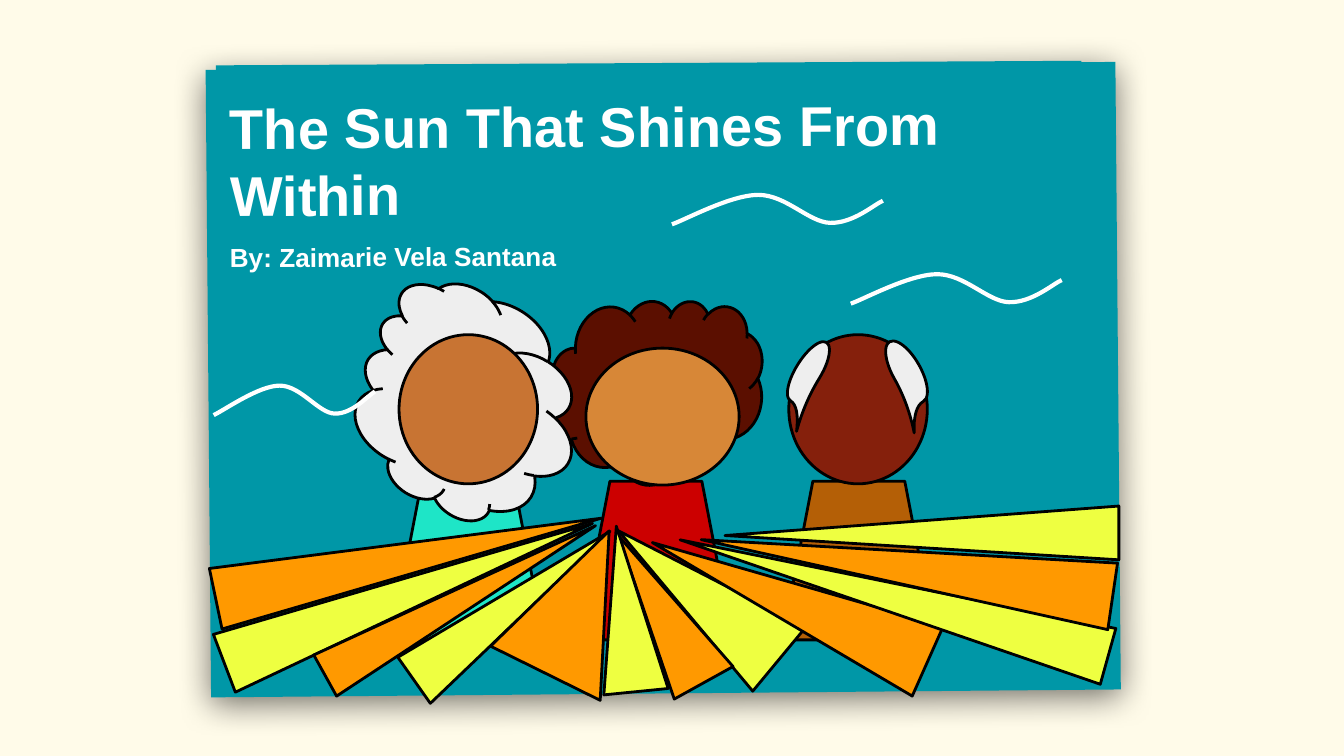
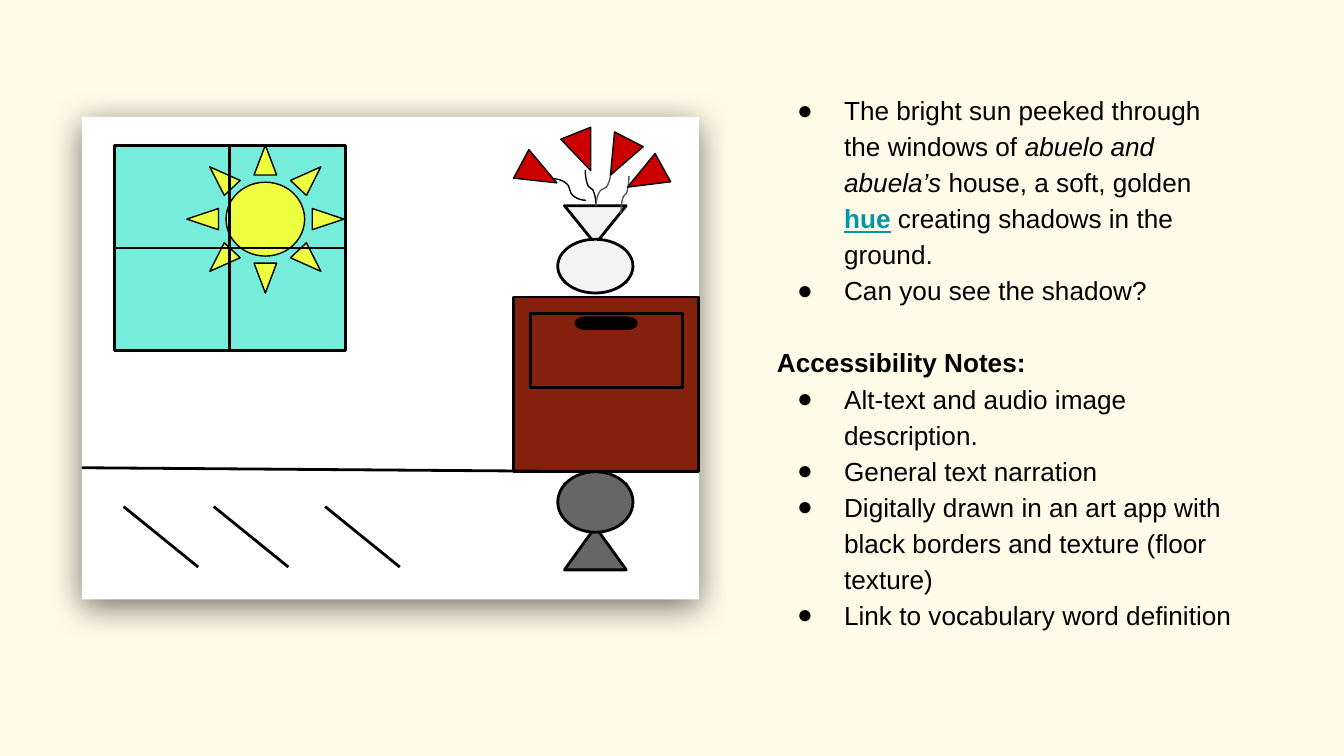
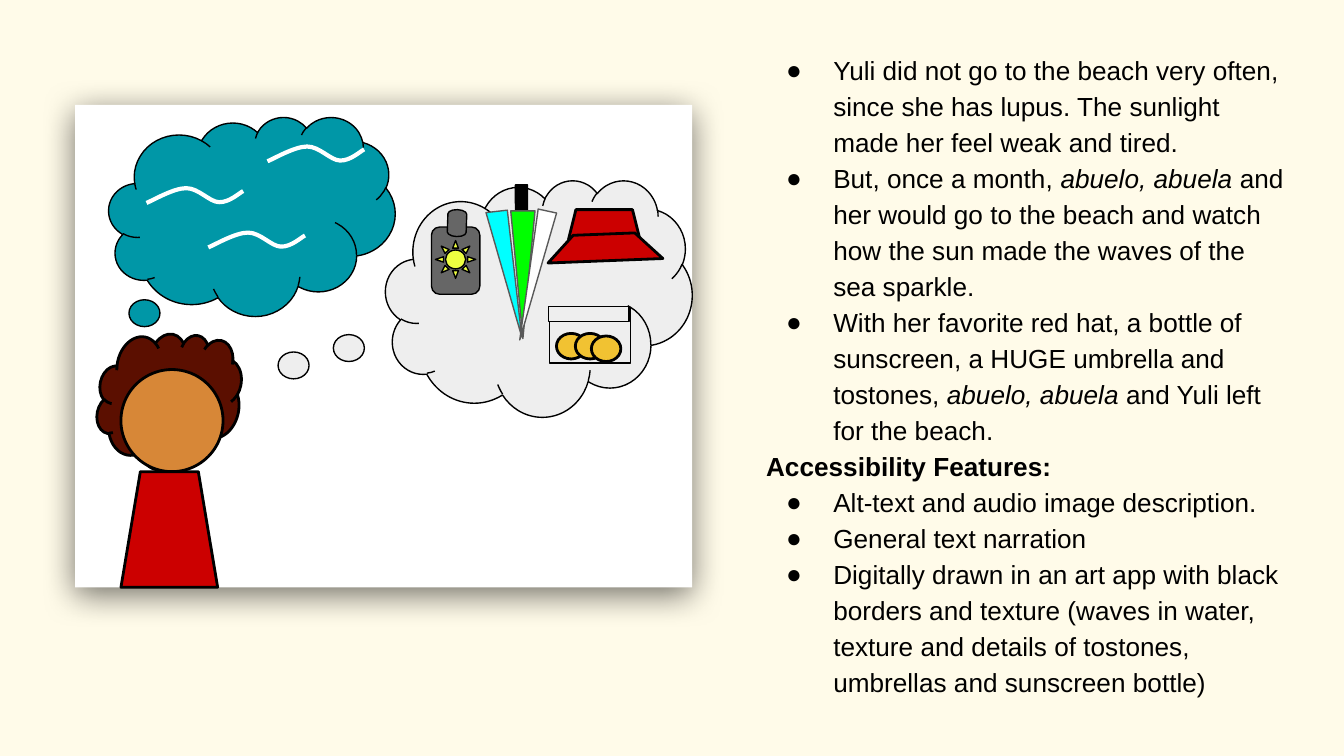
"""Build a three-slide storyboard for an accessible picture book."""
from lxml import etree
from pptx import Presentation
from pptx.dml.color import RGBColor
from pptx.enum import shapes, text
from pptx.oxml.ns import qn
from pptx.util import Pt

S, C = shapes.MSO_SHAPE, shapes.MSO_CONNECTOR
FONT = "Arial"
CREAM = RGBColor(0xFF, 0xFB, 0xE9)
TEAL = RGBColor(0x00, 0x97, 0xA7)
WHITE = RGBColor(0xFF, 0xFF, 0xFF)
BLACK = RGBColor(0x00, 0x00, 0x00)
GRAY = RGBColor(0x59, 0x59, 0x59)
SLATE = RGBColor(0x66, 0x66, 0x66)
SILVER = RGBColor(0xEE, 0xEE, 0xEE)
PORCELAIN = RGBColor(0xF3, 0xF3, 0xF3)
RED = RGBColor(0xCC, 0x00, 0x00)
ORANGE = RGBColor(0xFF, 0x99, 0x00)
YELLOW = RGBColor(0xEE, 0xFF, 0x41)
GOLD = RGBColor(0xF1, 0xC2, 0x32)
MINT = RGBColor(0x1E, 0xE5, 0xC7)
SKY = RGBColor(0x76, 0xED, 0xDB)
CYAN = RGBColor(0x00, 0xFF, 0xFF)
GREEN = RGBColor(0x00, 0xFF, 0x00)
OCHRE = RGBColor(0xB4, 0x5F, 0x06)
MAROON = RGBColor(0x85, 0x20, 0x0C)
DARK_HAIR = RGBColor(0x5B, 0x0F, 0x00)
YULI_SKIN = RGBColor(0xD7, 0x87, 0x37)
ABUELA_SKIN = RGBColor(0xC8, 0x74, 0x33)

THICK, THIN = 1.5, 0.75
CARD_SIZE = (330.5, 258.5)
WAVE = [(0, 1), (.07, .82), (.28, 0), (.41, 0), (.54, 0), (.65, .93),
        (.75, .95), (.86, .97), (.96, .32), (1, .2)]

TITLE = "The Sun That Shines From Within"
AUTHOR = "By: Zaimarie Vela Santana"

TORSOS = [(209.5, MINT), (419, OCHRE), (310.3, RED)]
RAYS = [
    (202.3, 212.4, 33.1, 211, 69.2, .5, YELLOW),
    (202.3, 193.7, 33.1, 211, 78.2, .5, ORANGE),
    (234, 239, 25.2, 165.6, 61, .5, ORANGE),
    (260.6, 260.6, 30.2, 131.8, 54.8, .344, YELLOW),
    (352.8, 262.8, 44.6, 110.2, 309.7, .452, YELLOW),
    (337, 280.8, 36, 90.7, 331, .452, ORANGE),
    (319, 281.5, 34.6, 89.3, 354.3, .452, YELLOW),
    (277.9, 281.5, 65.5, 83.5, 26.3, .452, ORANGE),
    (403.2, 241.2, 41, 160.6, 294, .452, ORANGE),
    (463.7, 200.9, 31, 237.6, 285.6, .452, YELLOW),
    (468, 192.2, 36, 222.5, 278.3, .452, ORANGE),
    (479.5, 180, 28.8, 211, 270, .452, YELLOW),
]
HEADS = [
    (S.CLOUD, (295.2, 159.1, 113, 100.8), DARK_HAIR, {"rot": 8.2}),
    (S.FLOWCHART_CONNECTOR, (313.9, 186.5, 82.1, 73.4), YULI_SKIN, {}),
    (S.CLOUD, (193, 154.8, 115.2, 123.8), SILVER, {"rot": 301.8}),
    (S.FLOWCHART_CONNECTOR, (213.8, 179.3, 74.2, 79.9), ABUELA_SKIN, {}),
    (S.FLOWCHART_CONNECTOR, (422.6, 179.3, 74.2, 79.9), MAROON, {}),
    (S.TEAR, (478.1, 180.7, 15.1, 36.7), SILVER, {"rot": 150.5, "adj": 1.668}),
    (S.TEAR, (426.2, 180.7, 13.7, 36.7), SILVER,
     {"rot": 211.7, "adj": 1.668, "flip": True}),
]
COVER_WAVES = [(360, 104.4, 113, 15.8), (455.8, 146.9, 113, 15.8),
               (114.5, 206.6, 86.4, 15.8)]

ROOM_NOTES = [
    ("bullet", [("The bright sun peeked through the windows of ", {}),
                ("abuelo and abuela’s", {"italic": True}),
                (" house, a soft, golden ", {}),
                ("hue", {"color": TEAL, "bold": True, "underline": True}),
                (" creating shadows in the ground.", {})]),
    ("bullet", [("Can you see the shadow?", {})]),
    ("heading", [("Accessibility Notes:", {"bold": True})]),
    ("bullet", [("Alt-text and audio image description.", {})]),
    ("bullet", [("General text narration", {})]),
    ("bullet", [("Digitally drawn in an art app with black borders and texture "
                 "(floor texture)", {})]),
    ("bullet", [("Link to vocabulary word definition", {})]),
]
WINDOW = (61.2, 77.8, 123.8, 110.2)
FURNITURE = [
    (S.RECTANGLE, (275, 159.1, 99.4, 93.6), MAROON, {}),
    (S.RECTANGLE, (284.4, 167.8, 81.4, 39.6), MAROON, {}),
    (S.FLOWCHART_TERMINATOR, (308.2, 169.9, 33.1, 6.5), BLACK, {"width": THIN}),
]
FLOOR_LINES = [(43.9, 250.6, 324.7, 252.7)] + [
    (x, 271.4, x + 40, 303.8) for x in (66.2, 114.5, 174.2)]
VASE_AND_SHADOW = [
    (S.FLOWCHART_COLLATE, (302.4, 110.2, 33.1, 41), PORCELAIN, {}),
    (S.OVAL, (298.8, 128.2, 40.3, 28.8), PORCELAIN, {}),
    (S.FLOWCHART_COLLATE, (302.4, 259.2, 33.1, 46.1), SLATE, {"rot": 180}),
    (S.OVAL, (298.8, 252.7, 40.3, 32.4), SLATE, {"rot": 180}),
]
STEMS = [
    ((324.7, 102.2, 20.2, 4.3), GRAY, 270, False),
    ((296.6, 95.8, 17.3, 11.5), BLACK, 0, False),
    ((306.7, 97.9, 19.4, 5.8), BLACK, 270, True),
    ((313.9, 97.2, 18.7, 7.9), GRAY, 90, False),
]
PETALS = [(280.1, 82.1, 118.1), (303.8, 70.6, 158.1),
          (323.3, 73.4, 207.2), (337, 84.2, 241.1)]
SUN = (100.1, 77.8, 84.2, 79.2)

BEACH_NOTES = [
    ("bullet", [("Yuli did not go to the beach very often, since she has lupus. "
                 "The sunlight made her feel weak and tired.", {})]),
    ("bullet", [("But, once a month, ", {}),
                ("abuelo, abuela", {"italic": True}),
                (" and her would go to the beach and watch how the sun made "
                 "the waves of the sea sparkle.", {})]),
    ("bullet", [("With her favorite red hat, a bottle of sunscreen, a HUGE "
                 "umbrella and tostones,", {}),
                (" abuelo, abuela", {"italic": True}),
                (" and Yuli left for the beach.", {})]),
    ("heading", [("Accessibility Features:", {"bold": True})]),
    ("bullet", [("Alt-text and audio image description.", {})]),
    ("bullet", [("General text narration", {})]),
    ("bullet", [("Digitally drawn in an art app with black borders and texture "
                 "(waves in water, texture and details of tostones, umbrellas "
                 "and sunscreen bottle)", {})]),
]
YULI_AND_THOUGHTS = [
    (S.CLOUD, (52.6, 177.1, 75.6, 74.9), DARK_HAIR, {"rot": 11.9}),
    (S.FLOWCHART_CONNECTOR, (64.8, 198, 54.7, 54.7), YULI_SKIN, {"rot": 3.6}),
    (S.FLOWCHART_MANUAL_OPERATION, (64.8, 252.7, 51.8, 61.9), RED, {"rot": 180}),
    (S.CLOUD, (58.3, 62.6, 153.4, 106.6), TEAL, {"width": THIN}),
    (S.CLOUD, (206.6, 96.5, 164.2, 126.7), SILVER, {"width": THIN}),
]
SEA_WAVES = [(x, y, 51.8, 7.9)
             for x, y in ((78.5, 100.8), (111.6, 124.6), (143.3, 78.5))]
UMBRELLA_EDGE = {"width": THIN, "line": GRAY}
BEACH_KIT = [
    (S.ROUNDED_RECTANGLE, (226.1, 126.7, 36, 25.9), SLATE,
     {"rot": 90, "width": THIN}),
    (S.SUN, (233.3, 128.9, 21.6, 20.2), YELLOW, {"width": THIN}),
    (S.FLOWCHART_TERMINATOR, (237.6, 114.5, 14.4, 10.1), SLATE,
     {"rot": 92, "width": THIN}),
    (S.RECTANGLE, (270.7, 104.4, 17.3, 6.5), BLACK, {"rot": 89.8, "width": THIN}),
    (S.ISOSCELES_TRIANGLE, (273.6, 113, 13, 68.4), GREEN,
     {"rot": 180, **UMBRELLA_EDGE}),
    (S.ISOSCELES_TRIANGLE, (280.8, 112.3, 10.1, 70.6), WHITE,
     {"rot": 192.1, **UMBRELLA_EDGE}),
    (S.ISOSCELES_TRIANGLE, (264.2, 113, 11.5, 68.4), CYAN,
     {"rot": 173.5, "adj": 0, **UMBRELLA_EDGE}),
    (S.TRAPEZOID, (304.6, 112.3, 38.2, 15.8), RED, {"adj": .25}),
    (S.DIAGONAL_STRIPE, (302.4, 118.1, 43.9, 43.2), RED,
     {"rot": 42.3, "adj": .536}),
]
BUBBLES = [(178.6, 179.3, SILVER), (149, 188.6, SILVER), (69.1, 160.6, TEAL)]
TUB = [(294.5, 164.9, 43.2, 29.5), (293.8, 164.2, 43.2, 7.9)]
TOSTONES = [(298.1, 178.6), (308.2, 178.6), (316.8, 180)]


def pts(values):
    return [Pt(v) for v in values]


def place(sp, box, rot=0):
    sp.left, sp.top, sp.width, sp.height = pts(box)
    sp.rotation = rot


def draw(slide, kind, box, fill, width=THICK, line=BLACK, rot=0, adj=None,
         flip=False):
    sp = slide.shapes.add_shape(kind, *pts(box))
    sp.rotation = rot
    sp.shadow.inherit = False
    sp.fill.solid()
    sp.fill.fore_color.rgb = fill
    if width:
        sp.line.color.rgb = line
        sp.line.width = Pt(width)
    else:
        sp.line.fill.background()
    if adj is not None:
        sp.adjustments[0] = adj
    if flip:
        sp._element.spPr.find(qn("a:xfrm")).set("flipH", "1")
    return sp


def draw_all(slide, items):
    for kind, box, fill, opts in items:
        draw(slide, kind, box, fill, **opts)


def add_card(slide, box, fill, rot=0):
    sp = draw(slide, S.ROUNDED_RECTANGLE, box, fill, width=0, rot=rot, adj=0)
    effects = sp._element.spPr.find(qn("a:effectLst"))
    shadow = etree.SubElement(effects, qn("a:outerShdw"), blurRad=str(Pt(18)),
                              dist=str(Pt(4)), dir="5400000", algn="bl",
                              rotWithShape="0")
    clr = etree.SubElement(shadow, qn("a:srgbClr"), val=str(BLACK))
    etree.SubElement(clr, qn("a:alpha"), val="55000")
    slide.shapes._spTree.insert(2, sp._element)


def add_line(slide, ends, color=BLACK, width=THICK, kind=C.STRAIGHT, rot=0,
             flip=False):
    cx = slide.shapes.add_connector(kind, *pts(ends))
    cx.line.color.rgb = color
    cx.line.width = Pt(width)
    spPr = cx._element.spPr
    etree.SubElement(spPr, qn("a:effectLst"))
    xfrm = spPr.find(qn("a:xfrm"))
    if rot:
        xfrm.set("rot", str(rot * 60000))
    if flip:
        xfrm.set("flipH", "1")
    return cx


def add_wave(slide, box):
    x, y, w, h = box
    points = [(Pt(x + w * px), Pt(y + h * py)) for px, py in WAVE]
    builder = slide.shapes.build_freeform(*points[0])
    builder.add_line_segments(points[1:], close=False)
    sp = builder.convert_to_shape()
    sp.shadow.inherit = False
    sp.fill.background()
    sp.line.color.rgb = WHITE
    sp.line.width = Pt(2.25)
    legs = list(sp._element.iter(qn("a:lnTo")))
    for i in range(0, len(legs), 3):
        curve = etree.Element(qn("a:cubicBezTo"))
        legs[i].addprevious(curve)
        for leg in legs[i:i + 3]:
            curve.append(leg[0])
            leg.getparent().remove(leg)


def add_run(p, content, size=14, color=BLACK, bold=False, italic=False,
            underline=False):
    r = p.add_run()
    r.text = content
    f = r.font
    f.name, f.size, f.bold, f.italic = FONT, Pt(size), bold, italic
    f.underline = underline
    f.color.rgb = color


def set_frame(sp, anchor=text.MSO_ANCHOR.TOP):
    tf = sp.text_frame
    tf.word_wrap = True
    tf.auto_size = text.MSO_AUTO_SIZE.NONE
    tf.vertical_anchor = anchor
    tf.margin_left = tf.margin_right = tf.margin_top = tf.margin_bottom = Pt(7.2)
    return tf


def add_banner(sp, box, content, size, anchor):
    place(sp, box, 359.7)
    sp.fill.solid()
    sp.fill.fore_color.rgb = TEAL
    p = set_frame(sp, anchor).paragraphs[0]
    p.alignment = text.PP_ALIGN.LEFT
    p.space_before = Pt(0)
    add_run(p, content, size=size, color=WHITE, bold=True)


def add_notes_list(slide, box, notes, heading_gap=0):
    sp = slide.placeholders[1]
    place(sp, box)
    tf = set_frame(sp)
    for i, (style, runs) in enumerate(notes):
        p = tf.add_paragraph() if i else tf.paragraphs[0]
        bulleted = style == "bullet"
        p.line_spacing = 1.15
        p.space_before = Pt(0 if bulleted else heading_gap)
        pPr = p._p.get_or_add_pPr()
        pPr.set("marL", str(Pt(36 if bulleted else 0)))
        pPr.set("indent", str(Pt(-25.2 if bulleted else 0)))
        if bulleted:
            etree.SubElement(pPr, qn("a:buChar"), char="●")
        else:
            etree.SubElement(pPr, qn("a:buNone"))
        for content, fmt in runs:
            add_run(p, content, **fmt)


def add_slide(prs, layout):
    slide = prs.slides.add_slide(prs.slide_layouts[layout])
    slide.background.fill.solid()
    slide.background.fill.fore_color.rgb = CREAM
    return slide


def add_story_slide(prs, card_at, notes_box, notes, heading_gap=0):
    slide = add_slide(prs, 1)
    title = slide.shapes.title._element
    title.getparent().remove(title)
    add_card(slide, card_at + CARD_SIZE, WHITE)
    add_notes_list(slide, notes_box, notes, heading_gap)
    return slide


def build_cover(prs):
    slide = add_slide(prs, 0)
    add_card(slide, (111.6, 35.3, 487.4, 336.2), TEAL, rot=359.5)
    add_banner(slide.shapes.title, (115.9, 33.8, 463.7, 94.3), TITLE, 30,
               text.MSO_ANCHOR.BOTTOM)
    add_banner(slide.placeholders[1], (115.9, 121.7, 198.7, 37.4), AUTHOR, 14,
               text.MSO_ANCHOR.TOP)
    for x, color in TORSOS:
        draw(slide, S.FLOWCHART_MANUAL_OPERATION, (x, 257.8, 82.1, 85), color,
             rot=180)
    for x, y, w, h, rot, adj, color in RAYS:
        draw(slide, S.ISOSCELES_TRIANGLE, (x, y, w, h), color, rot=rot, adj=adj)
    draw_all(slide, HEADS)
    for box in COVER_WAVES:
        add_wave(slide, box)


def build_room(prs):
    slide = add_story_slide(prs, (43.9, 62.6), (409, 41, 264.2, 128.9),
                            ROOM_NOTES, heading_gap=19.3)
    window = draw(slide, S.RECTANGLE, WINDOW, SKY)
    draw_all(slide, FURNITURE)
    for ends in FLOOR_LINES:
        add_line(slide, ends)
    draw_all(slide, VASE_AND_SHADOW)
    for (x, y, w, h), color, rot, flip in STEMS:
        add_line(slide, (x, y, x + w, y + h), color, THIN, C.CURVE, rot, flip)
    for x, y, rot in PETALS:
        draw(slide, S.ISOSCELES_TRIANGLE, (x, y, 17.3, 21.6), RED, width=THIN,
             rot=rot)
    draw(slide, S.SUN, SUN, YELLOW, width=THIN)
    for begin, end in ((3, 1), (0, 2)):
        bar = add_line(slide, (0, 0, 0, 0))
        bar.begin_connect(window, begin)
        bar.end_connect(window, end)


def build_beach(prs):
    slide = add_story_slide(prs, (40.3, 56.2), (403.2, 19.4, 292.3, 236.2),
                            BEACH_NOTES)
    draw_all(slide, YULI_AND_THOUGHTS)
    for box in SEA_WAVES:
        add_wave(slide, box)
    draw_all(slide, BEACH_KIT)
    for x, y, color in BUBBLES:
        draw(slide, S.OVAL, (x, y, 16.6, 14.4), color, width=THIN)
    for box in TUB:
        draw(slide, S.RECTANGLE, box, SILVER, width=THIN)
    for x, y in TOSTONES:
        draw(slide, S.OVAL, (x, y, 15.8, 13.7), GOLD)


def main():
    prs = Presentation()
    prs.slide_width, prs.slide_height = Pt(720), Pt(405)
    build_cover(prs)
    build_room(prs)
    build_beach(prs)
    prs.save("out.pptx")


if __name__ == "__main__":
    main()
